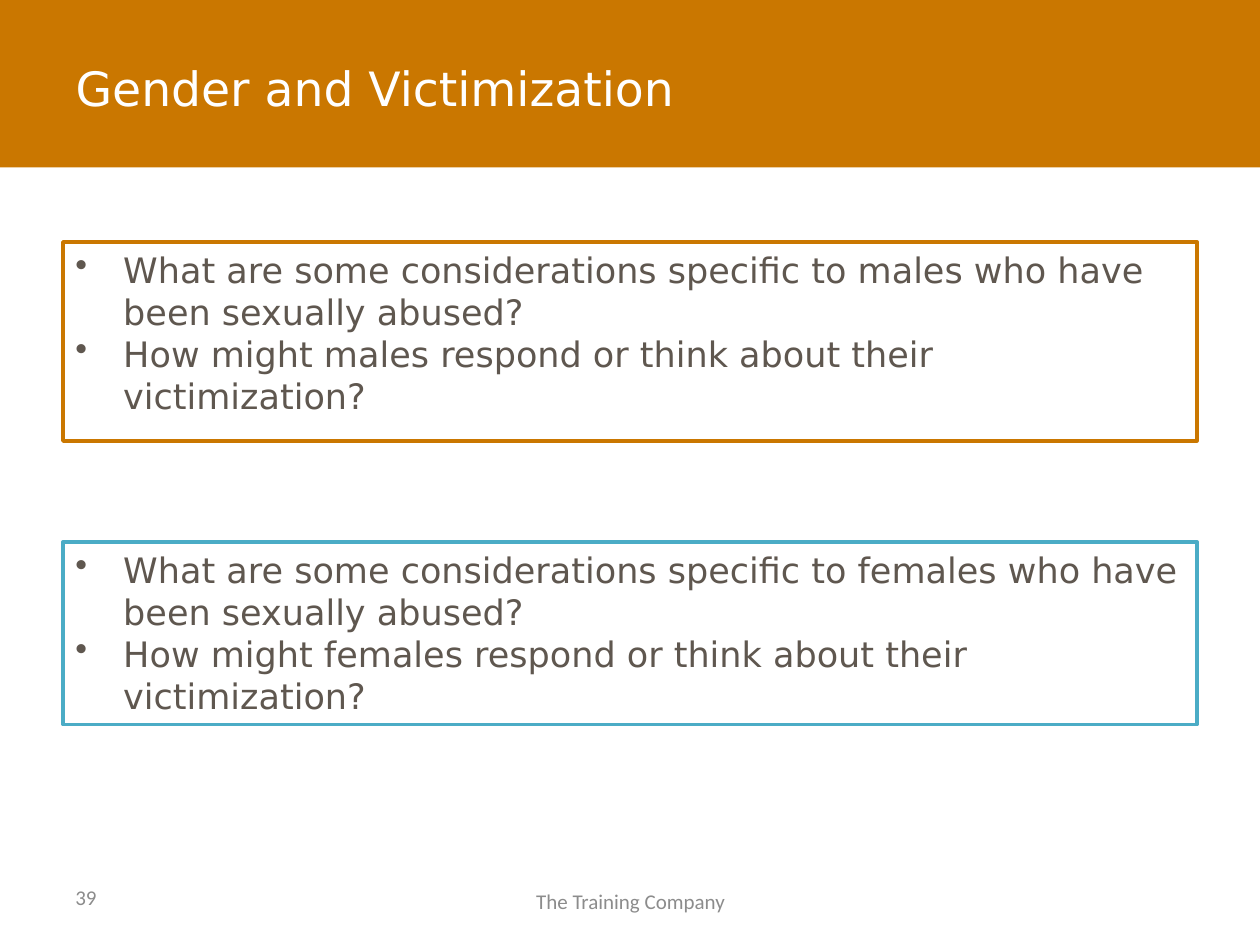
"""Build the Gender and Victimization discussion slide."""
from lxml import etree
from pptx import Presentation
from pptx.dml.color import RGBColor
from pptx.enum.shapes import MSO_SHAPE
from pptx.enum.text import MSO_ANCHOR, PP_ALIGN
from pptx.oxml.ns import qn
from pptx.util import Inches, Pt

RECTANGLE = MSO_SHAPE.RECTANGLE
TOP, MIDDLE = MSO_ANCHOR.TOP, MSO_ANCHOR.MIDDLE
LEFT, CENTER = PP_ALIGN.LEFT, PP_ALIGN.CENTER
COLORS = {name: RGBColor.from_string(value) for name, value in {
    "orange": "CA7700", "teal": "4BACC6", "white": "FFFFFF",
    "body": "5F574F", "footer": "8C8C8C"}.items()}
HEADING_FONT, FOOTER_FONT = "DejaVu Sans", "Calibri"


def style(paragraph, font_name, size, color, align=LEFT):
    paragraph.alignment = align
    for run in paragraph.runs:
        run.font.name = font_name
        run.font.size = Pt(size)
        run.font.color.rgb = COLORS[color]


def add_panel(left, top, width, height, fill):
    panel = slide.shapes.add_shape(RECTANGLE, left, top, width, height)
    panel.shadow.inherit = False
    panel.fill.solid()
    panel.fill.fore_color.rgb = COLORS[fill]
    panel.line.fill.background()
    return panel


deck = Presentation()
deck.slide_width, deck.slide_height = Inches(10), Inches(7.5)
slide = deck.slides.add_slide(deck.slide_layouts[5])
margin = int(deck.slide_width * 0.05)
content_width = deck.slide_width - 2 * margin

band = add_panel(0, 0, deck.slide_width, Inches(1.33), "orange")
slide.shapes.title.element.addprevious(band.element)

title = slide.shapes.title
title.left, title.top = margin, Inches(0.09)
title.width, title.height = content_width, Inches(0.97)
heading = title.text_frame
heading.text = "Gender and Victimization"
heading.vertical_anchor = MIDDLE
heading.margin_top = Inches(0.4)
heading.paragraphs[0].line_spacing = Pt(25)
style(heading.paragraphs[0], HEADING_FONT, 27, "white")

for group, top, height, outline in [("males", 1.92, 1.58, "orange"),
                                    ("females", 4.3, 1.45, "teal")]:
    questions = add_panel(margin, Inches(top), content_width, Inches(height), "white")
    questions.line.color.rgb = COLORS[outline]
    questions.line.width = Pt(2)
    frame = questions.text_frame
    frame.word_wrap = True
    frame.vertical_anchor = TOP
    frame.text = (f"What are some considerations specific to {group} who have been sexually abused?\n"
                  f"How might {group} respond or think about their victimization?")
    for question in frame.paragraphs:
        properties = question._p.get_or_add_pPr()
        properties.set("marL", str(Inches(0.38)))
        properties.set("indent", str(-Inches(0.38)))
        etree.SubElement(properties, qn("a:buChar")).set("char", "•")
        question.line_spacing = Pt(24)
        style(question, HEADING_FONT, 20, "body")

for wording, left, top, width, align in [("39", 0.5, 6.92, 2.33, LEFT),
                                         ("The Training Company", 3.42, 6.95, 3.17, CENTER)]:
    footer = slide.shapes.add_textbox(Inches(left), Inches(top), Inches(width), Inches(0.4)).text_frame
    footer.text = wording
    footer.word_wrap = True
    footer.vertical_anchor = MIDDLE
    style(footer.paragraphs[0], FOOTER_FONT, 12, "footer", align)

deck.save("out.pptx")
